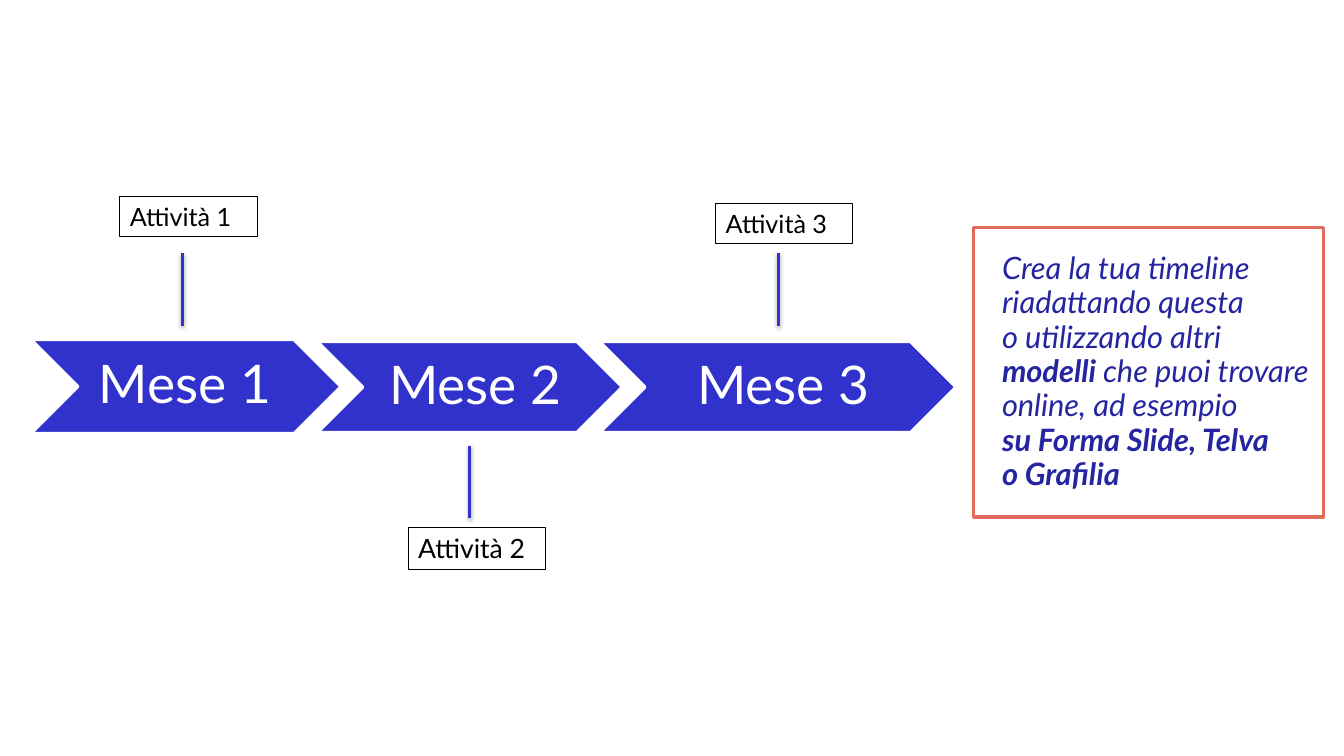
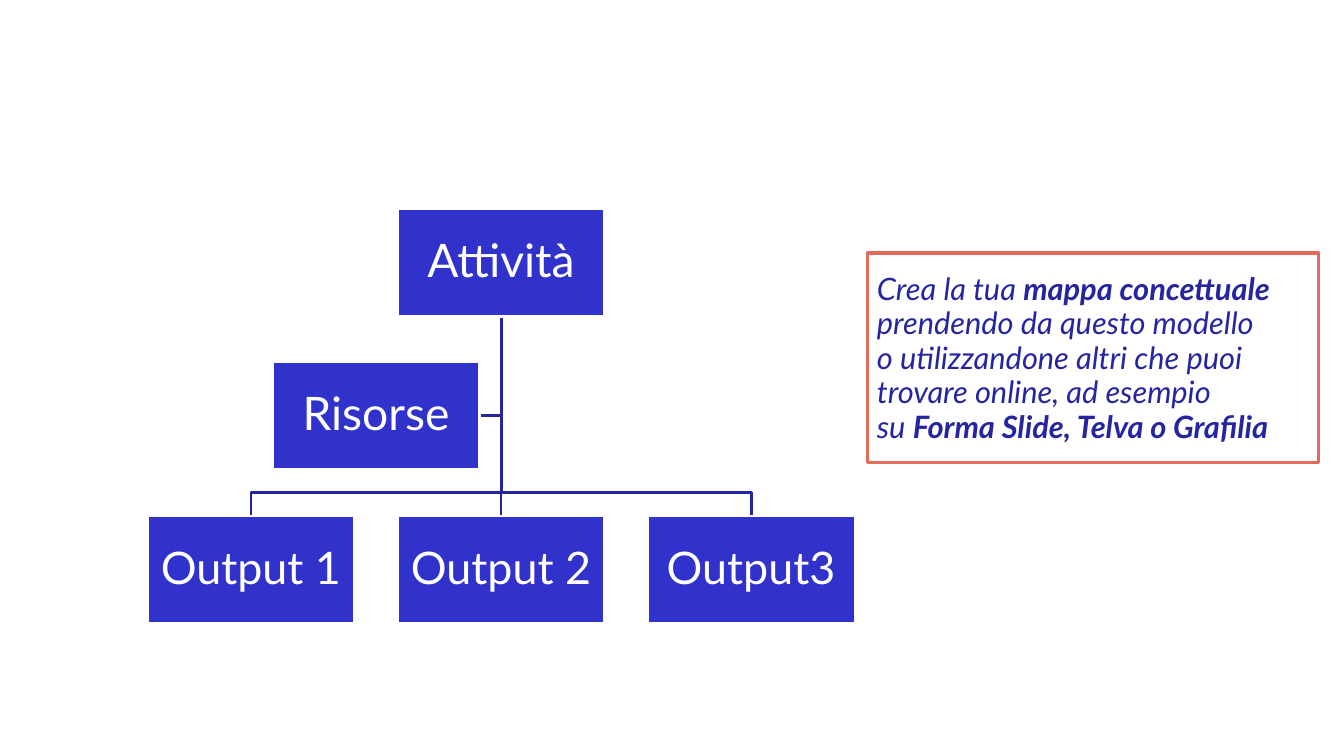
"""Build a two-slide deck: a project timeline and a concept map."""
from lxml.etree import SubElement
from pptx import Presentation
from pptx.dml.color import RGBColor
from pptx.enum.shapes import MSO_CONNECTOR, MSO_SHAPE
from pptx.enum.text import MSO_ANCHOR, PP_ALIGN
from pptx.oxml.ns import qn
from pptx.util import Pt

PX = 9144
FONT = "Lato"
BLUE, LINE_BLUE, NAVY = "3131CB", "3333CC", "2525A1"
CORAL, WHITE, BLACK = "E26B5C", "FFFFFF", "000000"

MONTHS = [
    ("Mese 1 ", (31, 337, 307, 93)),
    ("Mese 2", (315, 339, 302, 90)),
    ("Mese 3", (595, 339, 353, 90)),
]
ACTIVITIES = [
    ("Attività 1", 18, (119, 195, 136, 40), (181, 251)),
    ("Attività 2", 19, (405, 523, 136, 42), (466, 442)),
    ("Attività 3", 18, (710, 202, 136, 40), (772, 251)),
]
MARKER_H = 72
TIMELINE_NOTE = [
    [("Crea la tua timeline riadattando questa", False)],
    [("o utilizzando altri ", False), ("modelli ", True),
     ("che puoi trovare online, ad esempio", False)],
    [("su Forma Slide, Telva", True)],
    [("o Grafilia", True)],
]
MAP_NOTE = [
    [("Crea la tua ", False), ("mappa concettuale", True),
     (" prendendo da questo modello", False)],
    [("o utilizzandone altri che puoi trovare online, ad esempio", False)],
    [("su ", False), ("Forma Slide, Telva o Grafilia", True)],
]

ROOT, SIDE = "Attività", "Risorse"
OUTPUTS = ["Output 1", "Output 2", "Output3"]
NODE_W, NODE_H = 206, 107
CENTER, PITCH = 497, 248
ROOT_Y, SIDE_Y, OUTPUT_Y, BRANCH_Y = 207, 359, 512, 489


def rgb(color):
    return RGBColor.from_string(color)


def px(*values):
    return [v * PX for v in values]


def write(s, paragraphs, size, color, italic=False, spacing=1.0,
          align=PP_ALIGN.LEFT, anchor=MSO_ANCHOR.TOP, insets=(10, 5, 10, 5)):
    tf = s.text_frame
    tf.word_wrap = True
    tf.vertical_anchor = anchor
    (tf.margin_left, tf.margin_top,
     tf.margin_right, tf.margin_bottom) = px(*insets)
    for i, runs in enumerate(paragraphs):
        p = tf.add_paragraph() if i else tf.paragraphs[0]
        p.alignment = align
        p.line_spacing = spacing
        for text, bold in runs:
            r = p.add_run()
            r.text = text
            r.font.name = FONT
            r.font.size = Pt(size)
            r.font.bold = bold
            r.font.italic = italic
            r.font.color.rgb = rgb(color)


def add_shape(slide, kind, box, line, width, fill=None):
    s = slide.shapes.add_shape(kind, *px(*box))
    s.shadow.inherit = False
    if fill:
        s.fill.solid()
        s.fill.fore_color.rgb = rgb(fill)
    else:
        s.fill.background()
    s.line.color.rgb = rgb(line)
    s.line.width = Pt(width)
    return s


def add_block(slide, kind, box, text, size, insets):
    s = add_shape(slide, kind, box, WHITE, 2, BLUE)
    write(s, [[(text, False)]], size, WHITE, spacing=0.9, insets=insets,
          align=PP_ALIGN.CENTER, anchor=MSO_ANCHOR.MIDDLE)


def add_line(slide, x, top, bottom, color, shadow=False):
    c = slide.shapes.add_connector(MSO_CONNECTOR.STRAIGHT,
                                   *px(x, bottom, x, top))
    c.line.color.rgb = rgb(color)
    c.line.width = Pt(2)
    effects = SubElement(c._element.spPr, qn("a:effectLst"))
    if shadow:
        outer = SubElement(effects, qn("a:outerShdw"), blurRad="39370",
                           dist="20320", dir="5400000", rotWithShape="0")
        tint = SubElement(outer, qn("a:srgbClr"), val=BLACK)
        SubElement(tint, qn("a:alpha"), val="38000")


def add_path(slide, points):
    start, *rest = [px(*point) for point in points]
    builder = slide.shapes.build_freeform(*start)
    builder.add_line_segments(rest, close=False)
    s = builder.convert_to_shape()
    s.shadow.inherit = False
    s.fill.background()
    s.line.color.rgb = rgb(NAVY)
    s.line.width = Pt(2)


def add_note(slide, paragraphs, text_box, frame):
    s = slide.shapes.add_textbox(*px(*text_box))
    write(s, paragraphs, 22, NAVY, italic=True, spacing=0.93)
    add_shape(slide, MSO_SHAPE.RECTANGLE, frame, CORAL, 2.25)


def add_node(slide, center, top, text, size):
    add_block(slide, MSO_SHAPE.RECTANGLE,
              (center - NODE_W // 2, top, NODE_W, NODE_H),
              text, size, (2, 2, 2, 2))


def build_timeline(slide):
    for text, box in MONTHS:
        add_block(slide, MSO_SHAPE.CHEVRON, box, text, 38, (17, 6, 6, 6))
    for text, size, box, (x, top) in ACTIVITIES:
        add_line(slide, x, top, top + MARKER_H, LINE_BLUE, shadow=True)
        s = add_shape(slide, MSO_SHAPE.RECTANGLE, box, BLACK, 0.75)
        write(s, [[(text, False)]], size, BLACK)
    add_note(slide, TIMELINE_NOTE, (984, 245, 330, 259), (966, 226, 347, 287))


def build_map(slide):
    root_bottom = ROOT_Y + NODE_H
    side_center = CENTER - PITCH // 2
    side_mid = SIDE_Y + NODE_H // 2
    add_path(slide, [(CENTER, root_bottom), (CENTER, side_mid),
                     (side_center + NODE_W // 2, side_mid)])
    add_line(slide, CENTER, root_bottom, OUTPUT_Y, NAVY)
    for x in (CENTER - PITCH, CENTER + PITCH):
        add_path(slide, [(CENTER, root_bottom), (CENTER, BRANCH_Y),
                         (x, BRANCH_Y), (x, OUTPUT_Y)])
    add_node(slide, CENTER, ROOT_Y, ROOT, 33)
    add_node(slide, side_center, SIDE_Y, SIDE, 33)
    for i, text in enumerate(OUTPUTS):
        add_node(slide, CENTER + (i - 1) * PITCH, OUTPUT_Y, text, 32)
    add_note(slide, MAP_NOTE, (860, 266, 457, 259), (860, 251, 448, 208))


def main():
    prs = Presentation()
    prs.slide_width, prs.slide_height = px(1333, 750)
    for build in (build_timeline, build_map):
        build(prs.slides.add_slide(prs.slide_layouts[6]))
    prs.save("out.pptx")


if __name__ == "__main__":
    main()
